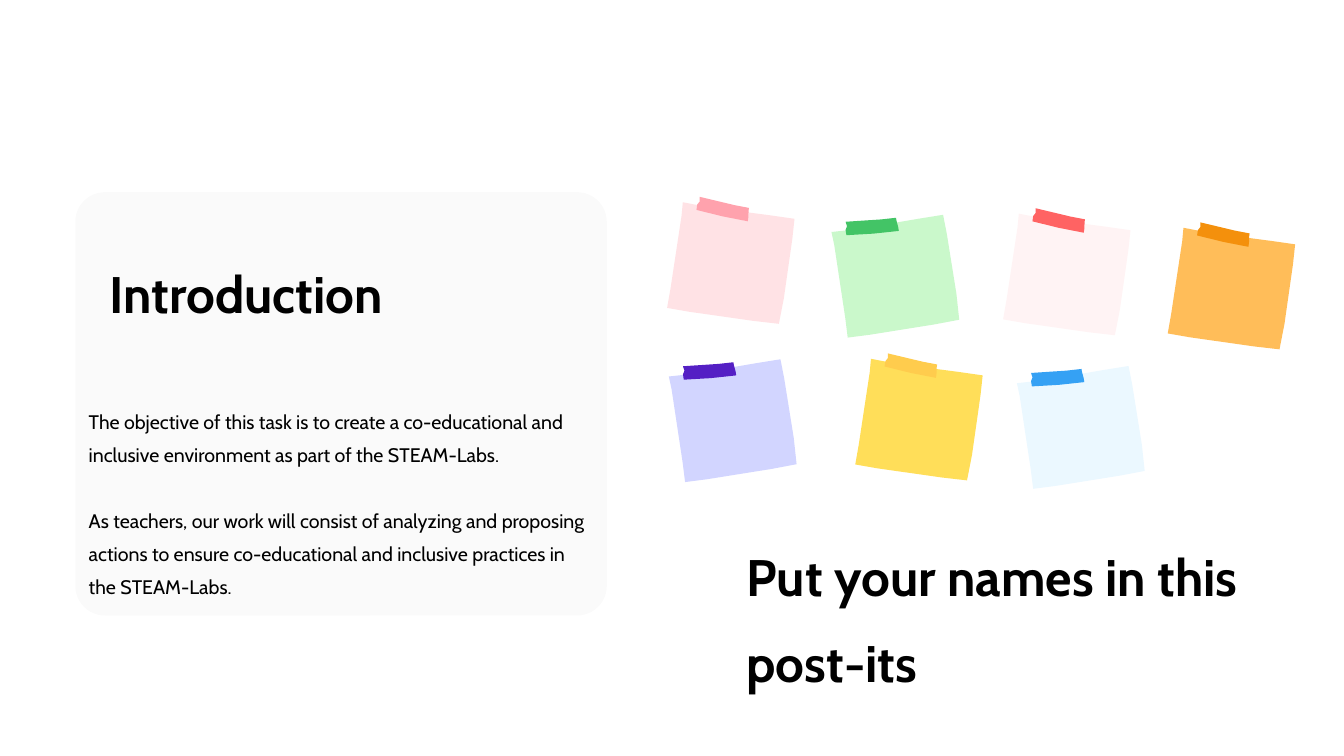
from dataclasses import dataclass

from lxml.etree import SubElement
from pptx import Presentation
from pptx.dml.color import RGBColor
from pptx.enum.shapes import MSO_SHAPE
from pptx.enum.text import MSO_ANCHOR, MSO_AUTO_SIZE, PP_ALIGN
from pptx.oxml.ns import qn
from pptx.util import Inches, Pt


@dataclass(frozen=True)
class Theme:
    font: str = "Cabin"
    ink: str = "000000"
    panel_alpha: int = 2000  # thousandths of a percent
    heading: int = 55
    body: int = 21
    leading: float = 1.4
    paragraph_gap: int = 36


THEME = Theme()
COLUMNS, ROWS = 20, 11.25

deck = Presentation()
deck.slide_width, deck.slide_height = Inches(20), Inches(11.25)
COL, ROW = deck.slide_width / COLUMNS, deck.slide_height / ROWS
slide = deck.slides.add_slide(deck.slide_layouts[5])


def write(shape, box, paragraphs, size, bold=False):
    """Place a text shape at box (columns and rows) and fill it."""
    left, top, width, height = box
    shape.left, shape.top = round(left * COL), round(top * ROW)
    shape.width, shape.height = round(width * COL), round(height * ROW)
    frame = shape.text_frame
    frame.margin_left = frame.margin_right = frame.margin_top = frame.margin_bottom = 0
    frame.vertical_anchor = MSO_ANCHOR.TOP
    frame.word_wrap = True
    frame.auto_size = MSO_AUTO_SIZE.SHAPE_TO_FIT_TEXT
    frame.text = "\n".join(paragraphs)
    for index, paragraph in enumerate(frame.paragraphs):
        paragraph.alignment = PP_ALIGN.LEFT
        paragraph.line_spacing = THEME.leading
        paragraph.space_before = Pt(THEME.paragraph_gap if index else 0)
        font = paragraph.font
        font.name, font.size, font.bold = THEME.font, Pt(size), bold
        font.color.rgb = RGBColor.from_string(THEME.ink)


def draw_paper(outline, left, top, angle, color):
    """Draw an outline given in columns and rows, turned about its centre."""
    start, *rest = [(round((left + x) * COL), round((top + y) * ROW)) for x, y in outline]
    builder = slide.shapes.build_freeform(*start)
    builder.add_line_segments(rest, close=True)
    paper = builder.convert_to_shape()
    paper.rotation = angle
    paper.shadow.inherit = False
    paper.fill.solid()
    paper.fill.fore_color.rgb = RGBColor.from_string(color)
    paper.line.fill.background()


# Introduction panel, behind the title
panel = slide.shapes.add_shape(
    MSO_SHAPE.ROUNDED_RECTANGLE,
    round(1.12 * COL), round(2.86 * ROW), round(7.91 * COL), round(6.3 * ROW),
)
panel.adjustments[0] = 0.07
panel.shadow.inherit = False
panel.line.fill.background()
panel.fill.solid()
panel.fill.fore_color.rgb = RGBColor.from_string(THEME.ink)
panel_color = panel.element.spPr.find(f"{qn('a:solidFill')}/{qn('a:srgbClr')}")
SubElement(panel_color, qn("a:alpha"), val=str(THEME.panel_alpha))

title = slide.shapes.title
title.element.addprevious(panel.element)
write(title, (1.63, 3.53, 6.87, 0.93), ["Introduction"], THEME.heading, bold=True)

objective = [
    "The objective of this task is to create a co-educational and inclusive "
    "environment as part of the STEAM-Labs.",
    "As teachers, our work will consist of analyzing and proposing actions to "
    "ensure co-educational and inclusive practices in the STEAM-Labs.",
]
write(slide.shapes.add_textbox(0, 0, 0, 0), (1.32, 5.96, 7.51, 3.32), objective, THEME.body)

# Post-its: a sheet and a strip of tape, leaning right or left
SHEET = [(1.7, 0.3), (1.69, 0.01), (1.32, 0.01), (0.4, 0.02), (0.01, 0), (0.02, 0.2),
         (0.01, 1.29), (0, 1.59), (0.33, 1.6), (1.3, 1.6), (1.68, 1.59), (1.7, 1.2)]
TAPE = [(0.02, 0), (0.55, 0.05), (0.77, 0.06), (0.77, 0.1), (0.78, 0.2), (0.78, 0.26),
        (0.4, 0.24), (0, 0.2), (0, 0.12), (0.03, 0.07)]
RIGHT = (8.1, 0.34, -0.14)  # angle, tape offset across and down
LEFT = (350.9, 0.1, -0.07)

post_its = [
    (10.03, 3.12, RIGHT, "FFE2E5", "FFA2AD"),
    (12.48, 3.31, LEFT, "CAF8CB", "43C466"),
    (10.06, 5.46, LEFT, "D2D5FF", "541FC4"),
    (15.03, 3.29, RIGHT, "FFF3F4", "FF6363"),
    (12.83, 5.45, RIGHT, "FFDE59", "FFCC4D"),
    (15.24, 5.56, LEFT, "EBF8FF", "35A1F4"),
    (17.48, 3.5, RIGHT, "FFBD59", "F4900C"),
]
for left, top, (angle, across, down), sheet_color, tape_color in post_its:
    draw_paper(SHEET, left, top, angle, sheet_color)
    draw_paper(TAPE, left + across, top + down, angle, tape_color)

write(slide.shapes.add_textbox(0, 0, 0, 0), (11.11, 7.75, 7.31, 2.22),
      ["Put your names in this post-its"], THEME.heading, bold=True)

deck.save("out.pptx")
